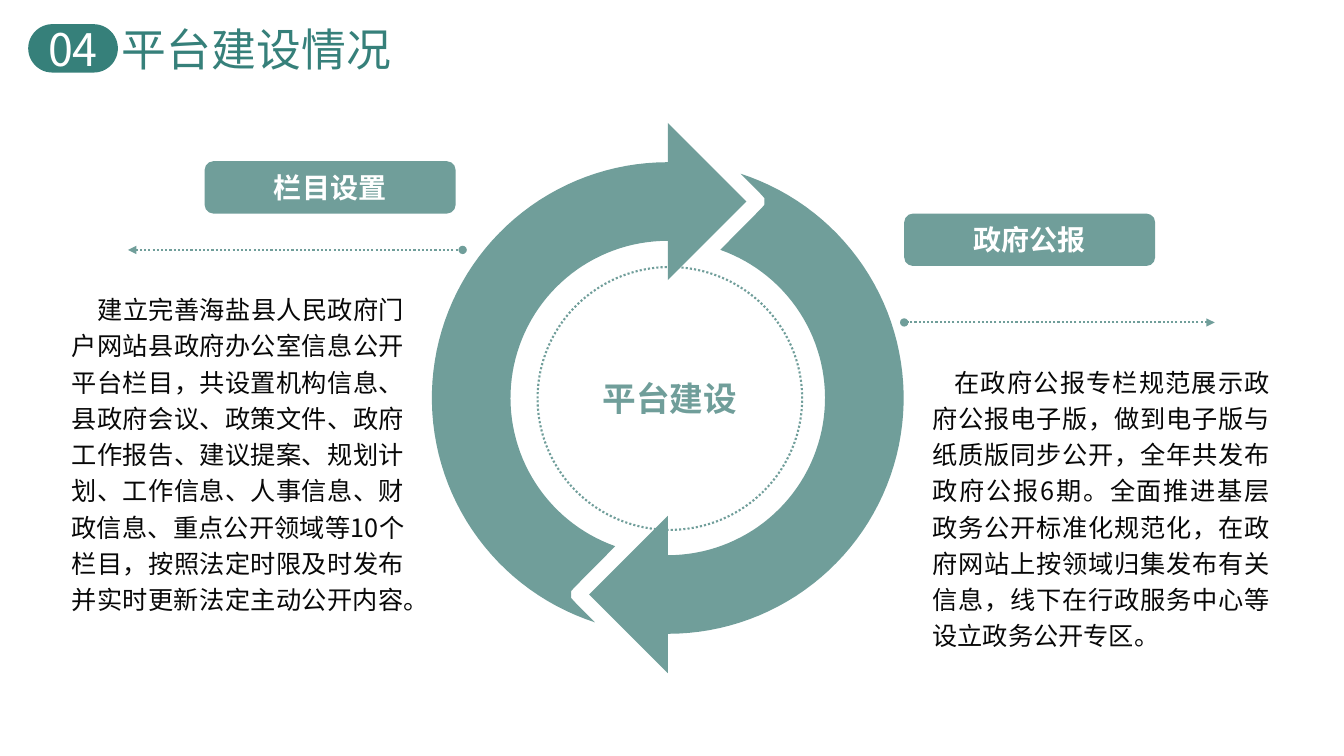
from dataclasses import dataclass
from math import cos, radians, sin

from lxml.etree import SubElement
from pptx import Presentation
from pptx.dml.color import RGBColor
from pptx.enum.dml import MSO_LINE
from pptx.enum.shapes import MSO_CONNECTOR, MSO_SHAPE
from pptx.enum.text import MSO_ANCHOR, MSO_AUTO_SIZE, PP_ALIGN
from pptx.oxml.ns import qn
from pptx.util import Inches, Pt


@dataclass(frozen=True)
class Theme:
    font: str = "Noto Sans CJK SC"
    sage: str = "709E9A"
    teal: str = "36807A"
    white: str = "FFFFFF"
    ink: str = "080808"
    title: int = 32
    hub: int = 24
    label: int = 20
    body: int = 18
    line: float = 1.5


class Deck:
    """Places styled elements on a grid of 160 columns by 90 rows."""

    def __init__(self, prs, theme):
        self.t = theme
        self.u = prs.slide_width / 160
        self.s = prs.slides.add_slide(prs.slide_layouts[3])

    def emu(self, *cells):
        return [round(c * self.u) for c in cells]

    def label(self, sp, text, size, color, bold=False, align=PP_ALIGN.CENTER,
              anchor=MSO_ANCHOR.MIDDLE, wrap=False):
        tf = sp.text_frame
        tf.auto_size = MSO_AUTO_SIZE.NONE
        tf.word_wrap, tf.vertical_anchor = wrap, anchor
        p = tf.paragraphs[0]
        p.alignment = align
        p.space_before = Pt(0)
        r = p.add_run()
        r.text = text
        r.font.size, r.font.bold, r.font.name = Pt(size), bold, self.t.font
        r.font.color.rgb = RGBColor.from_string(color)
        SubElement(r._r.get_or_add_rPr(), qn("a:ea"), typeface=self.t.font)
        return p

    def place(self, idx, box):
        sp = self.s.placeholders[idx]
        sp.left, sp.top, sp.width, sp.height = self.emu(*box)
        return sp

    def title(self, box, text):
        self.label(self.place(0, box), text, self.t.title, self.t.teal,
                   align=PP_ALIGN.LEFT)

    def body(self, idx, box, text, indent):
        p = self.label(self.place(idx, box), text, self.t.body, self.t.ink,
                       align=PP_ALIGN.JUSTIFY, anchor=MSO_ANCHOR.TOP, wrap=True)
        p.line_spacing = 1.2
        pPr = p._p.get_or_add_pPr()
        pPr.set("marL", "0")
        pPr.set("indent", str(Inches(indent)))
        SubElement(pPr, qn("a:buNone"))

    def paint(self, sp, color):
        sp.shadow.inherit = False
        sp.fill.solid()
        sp.fill.fore_color.rgb = RGBColor.from_string(color)
        sp.line.fill.background()

    def dots(self, line):
        line.color.rgb = RGBColor.from_string(self.t.sage)
        line.width = Pt(self.t.line)
        line.dash_style = MSO_LINE.ROUND_DOT

    def pill(self, box, text, fill, size, bold, radius):
        sp = self.s.shapes.add_shape(MSO_SHAPE.ROUNDED_RECTANGLE, *self.emu(*box))
        sp.adjustments[0] = radius
        self.paint(sp, fill)
        self.label(sp, text, size, self.t.white, bold)

    def hub(self, box, text):
        sp = self.s.shapes.add_shape(MSO_SHAPE.OVAL, *self.emu(*box))
        sp.shadow.inherit = False
        sp.fill.background()
        self.dots(sp.line)
        self.label(sp, text, self.t.hub, self.t.sage, True)

    def arrow(self, tip, end, y):
        c = self.s.shapes.add_connector(MSO_CONNECTOR.STRAIGHT,
                                        *self.emu(tip, y, end, y))
        self.dots(c.line)
        spPr = c._element.spPr
        ln = spPr.find(qn("a:ln"))
        SubElement(ln, qn("a:headEnd"), type="triangle")
        SubElement(ln, qn("a:tailEnd"), type="oval")
        SubElement(spPr, qn("a:effectLst"))

    def ring_arrow(self, cx, cy, mid, band, turn):
        outer, inner = mid + band / 2, mid - band / 2

        def arc(radius, start, stop):
            angles = [radians(start + (stop - start) * i / 64) for i in range(65)]
            return [(radius * cos(a), radius * sin(a)) for a in angles]

        notch = [(-11.16, 24.2), (-11.5, 23.8), (-11.5, 23), (-11.16, 22.6)]
        head = [(0, band - mid), (band, -mid), (0, -mid - band)]
        outline = arc(outer, 270, 108) + notch + arc(inner, 109.5, 270) + head
        pts = [self.emu(cx + turn * x, cy + turn * y) for x, y in outline]
        fb = self.s.shapes.build_freeform(*pts[0])
        fb.add_line_segments(pts[1:], close=True)
        self.paint(fb.convert_to_shape(), self.t.sage)


def main():
    prs = Presentation()
    prs.slide_width, prs.slide_height = Inches(13.33), Inches(7.5)
    t = Theme()
    d = Deck(prs, t)
    d.title((13.32, 1.92, 41.76, 7.68), "平台建设情况")
    d.pill((3.36, 2.88, 10.68, 5.76), "04", t.teal, t.title, False, 0.5)
    d.hub((64, 31.8, 31.5, 31.3), "平台建设")
    for turn in (1, -1):
        d.ring_arrow(79.5, 47.4, 23.4, 9.36, turn)
    sections = [
        ("栏目设置", (24.36, 19.2), (15.24, 55.08, 29.76),
         (7.32, 33.72, 42, 40.44), 0.26,
         "建立完善海盐县人民政府门户网站县政府办公室信息公开平台栏目，共设置机构信息、"
         "县政府会议、政策文件、政府工作报告、建议提案、规划计划、工作信息、人事信息、"
         "财政信息、重点公开领域等10个栏目，按照法定时限及时发布并实时更新法定主动公开内容。"),
        ("政府公报", (107.64, 25.44), (144.6, 107.64, 38.4),
         (109.8, 42.36, 42.6, 36.12), 0.22,
         "在政府公报专栏规范展示政府公报电子版，做到电子版与纸质版同步公开，"
         "全年共发布政府公报6期。全面推进基层政务公开标准化规范化，"
         "在政府网站上按领域归集发布有关信息，线下在行政服务中心等设立政务公开专区。"),
    ]
    for idx, (label, corner, rule, box, indent, text) in enumerate(sections, 1):
        d.pill((*corner, 29.88, 6.24), label, t.sage, t.label, True, 0.167)
        d.arrow(*rule)
        d.body(idx, box, text, indent)
    prs.save("out.pptx")


if __name__ == "__main__":
    main()
